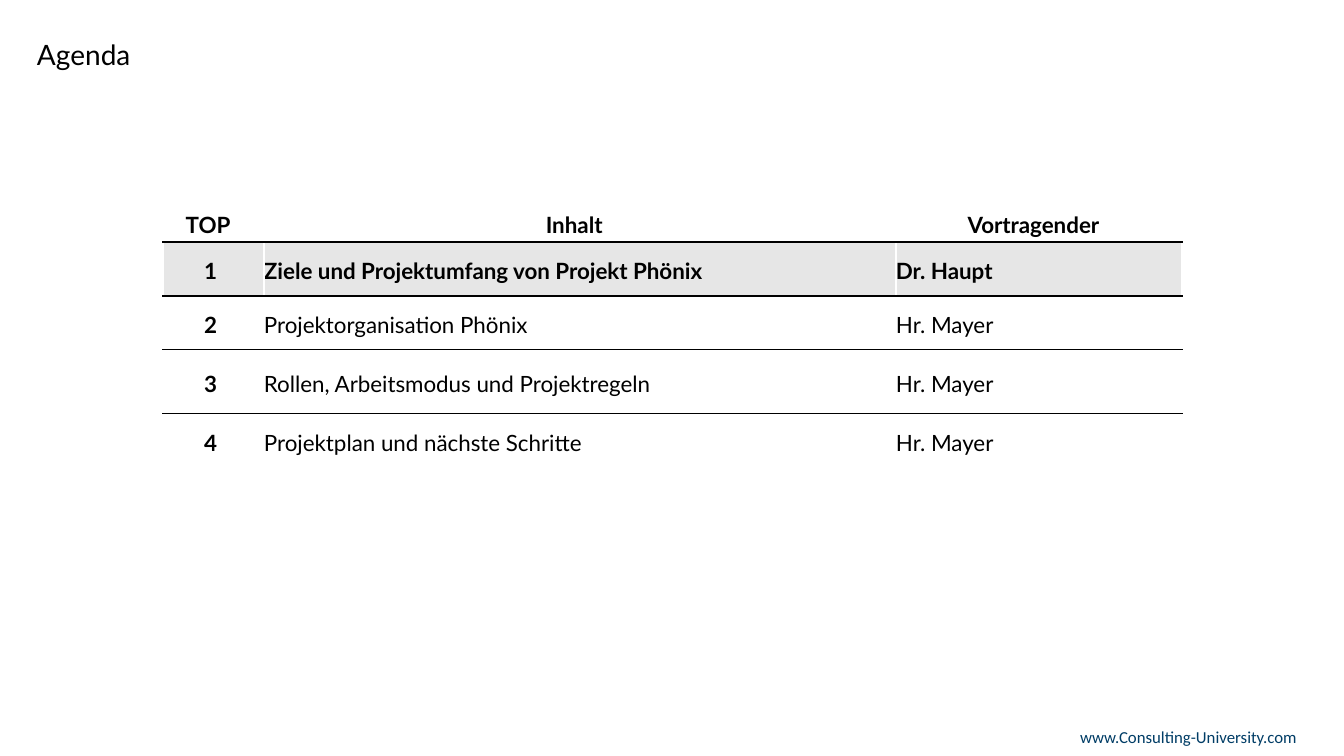
from lxml import etree
from pptx import Presentation
from pptx import util as u
from pptx.dml.color import RGBColor
from pptx.enum import text
from pptx.oxml.ns import qn

PX = 914400 / 100.8
COLORS = {"ink": "000000", "paper": "FFFFFF", "highlight": "E6E6E6", "footer": "003D66"}
HEADER = ["TOP ", "Inhalt ", "Vortragender "]
TOPICS = [
    ("Ziele und Projektumfang von Projekt Phönix", "Dr. Haupt"),
    ("Projektorganisation Phönix", "Hr. Mayer"),
    ("Rollen, Arbeitsmodus und Projektregeln", "Hr. Mayer"),
    ("Projektplan und nächste Schritte", "Hr. Mayer"),
]
CURRENT_TOPIC = 1
COLUMN_WIDTHS = [101, 632, 286]
ROW_HEIGHTS = [48, 54, 54, 64, 54]


def px(length):
    return u.Emu(round(length * PX))


def set_attributes(target, values):
    for name, value in values.items():
        setattr(target, name, value)


def write(para, words, size, color="ink", face="Lato", bold=False, **layout):
    set_attributes(para, layout)
    span = para.add_run()
    span.text = words
    set_attributes(span.font, {"name": face, "size": u.Pt(size), "bold": bold})
    span.font.color.rgb = RGBColor.from_string(COLORS[color])


def set_margins(target, left, top, right, bottom):
    set_attributes(target, {"margin_left": px(left), "margin_top": px(top),
                            "margin_right": px(right), "margin_bottom": px(bottom)})


def add_borders(cell, sides):
    # Border lines come before the fill in the cell properties
    properties = cell._tc.get_or_add_tcPr()
    for place, (side, color) in enumerate(sides.items()):
        line = etree.Element(qn(f"a:ln{side}"), w=str(u.Pt(1)))
        fill = etree.SubElement(line, qn("a:solidFill"))
        etree.SubElement(fill, qn("a:srgbClr"), val=COLORS[color])
        properties.insert(place, line)


def add_title(page, left, top, width, height):
    box = page.shapes.title
    set_attributes(box, {"left": px(left), "top": px(top),
                         "width": px(width), "height": px(height)})
    frame = box.text_frame
    set_margins(frame, 0, 5, 0, 5)
    set_attributes(frame, {"vertical_anchor": text.MSO_ANCHOR.TOP, "word_wrap": True,
                           "auto_size": text.MSO_AUTO_SIZE.NONE})
    write(frame.paragraphs[0], "Agenda", 20,
          alignment=text.PP_ALIGN.LEFT, line_spacing=0.9)


def add_agenda(page, left, top):
    rows = [HEADER] + [(str(n), *topic) for n, topic in enumerate(TOPICS, 1)]
    table = page.shapes.add_table(
        len(rows), len(HEADER), px(left), px(top),
        px(sum(COLUMN_WIDTHS)), px(sum(ROW_HEIGHTS))).table
    set_attributes(table, {"first_row": False, "horz_banding": False})
    for column, width in zip(table.columns, COLUMN_WIDTHS):
        column.width = px(width)
    for row, height in zip(table.rows, ROW_HEIGHTS):
        row.height = px(height)

    for r, words_in_row in enumerate(rows):
        is_header, is_current = r == 0, r == CURRENT_TOPIC
        sides = {"L": "paper", "R": "paper"}
        if not is_header:
            sides["T"] = "ink"
        if r < len(rows) - 1:
            sides["B"] = "ink"
        for c, words in enumerate(words_in_row):
            cell = table.cell(r, c)
            set_margins(cell, 0, 4 if is_header else 8, 6, 4)
            cell.vertical_anchor = text.MSO_ANCHOR.BOTTOM if is_header else text.MSO_ANCHOR.MIDDLE
            cell.fill.solid()
            cell.fill.fore_color.rgb = RGBColor.from_string(
                COLORS["highlight" if is_current else "paper"])
            add_borders(cell, sides)
            centred = is_header or c == 0
            write(cell.text_frame.paragraphs[0], words, 16,
                  bold=centred or is_current,
                  alignment=text.PP_ALIGN.CENTER if centred else text.PP_ALIGN.LEFT)


def add_footer(page, left, top, width, height):
    box = page.shapes.add_textbox(px(left), px(top), px(width), px(height))
    frame = box.text_frame
    set_attributes(frame, {"word_wrap": True, "vertical_anchor": text.MSO_ANCHOR.MIDDLE})
    write(frame.paragraphs[0], "www.Consulting-University.com", 12, "footer", "Calibri",
          alignment=text.PP_ALIGN.RIGHT)


def main():
    deck = Presentation()
    set_attributes(deck, {"slide_width": px(1344), "slide_height": px(756)})
    page = deck.slides.add_slide(deck.slide_layouts[5])
    add_title(page, 37, 36, 1270, 59)
    add_agenda(page, 163, 194)
    add_footer(page, 965, 722, 342, 30)
    deck.save("out.pptx")


if __name__ == "__main__":
    main()
